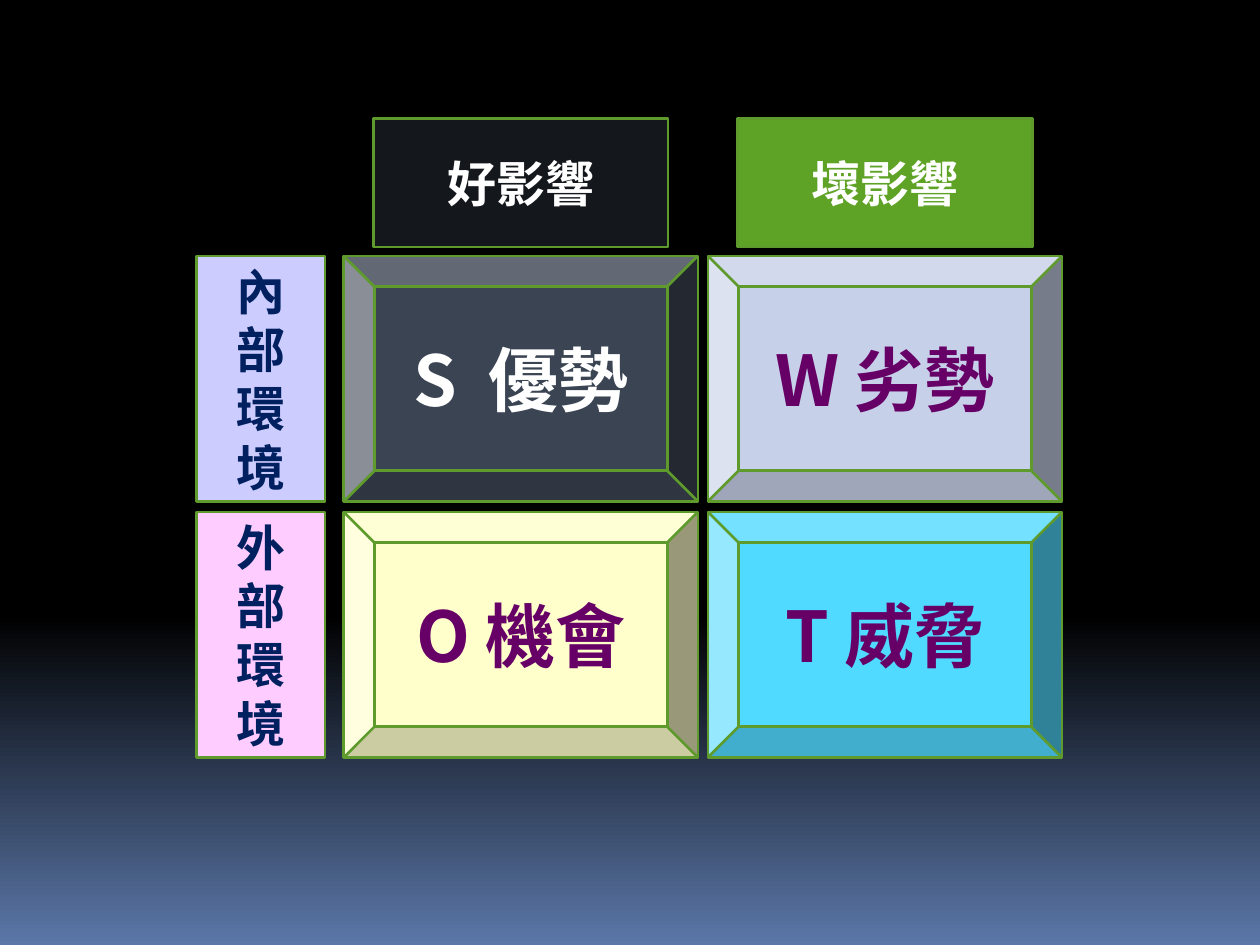
import copy

import lxml.etree
import pptx
import pptx.dml.color
import pptx.enum.shapes
import pptx.enum.text
import pptx.oxml.ns
import pptx.util

Cm = pptx.util.Cm
Shape = pptx.enum.shapes.MSO_SHAPE
CJK_FONT = "Noto Sans CJK SC"


def rgb(value):
    return pptx.dml.color.RGBColor.from_string(value)


class SwotSlide:
    """Holds the style and the current slide."""

    outline = "5E9B2C"
    label_font = {"name": "Calibri", "size": pptx.util.Pt(28), "bold": True}
    quadrant_font = {"name": CJK_FONT, "size": pptx.util.Pt(40), "bold": True}

    def __init__(self, deck):
        self.slide = deck.slides.add_slide(deck.slide_layouts[6])

    def background(self, stops):
        fill = self.slide.background.fill
        fill.gradient()
        fill.gradient_angle = 270
        first = fill.gradient_stops[0]
        first.color.rgb = rgb(stops[0][1])
        stop_list = self.slide.background._cSld.find(
            ".//" + pptx.oxml.ns.qn("a:gsLst"))
        stop_list.insert(1, copy.deepcopy(stop_list[0]))
        for stop, (position, color) in zip(fill.gradient_stops, stops):
            stop.position = position
            stop.color.rgb = rgb(color)

    def box(self, kind, left, top, width, height, fill, lines, color, font):
        box = self.slide.shapes.add_shape(
            kind, Cm(left), Cm(top), Cm(width), Cm(height))
        box.shadow.inherit = False
        box.fill.solid()
        box.fill.fore_color.rgb = rgb(fill)
        box.line.color.rgb = rgb(self.outline)
        box.line.width = pptx.util.Pt(1.5)
        frame = box.text_frame
        frame.word_wrap = True
        frame.vertical_anchor = pptx.enum.text.MSO_ANCHOR.MIDDLE
        for index, line in enumerate(lines):
            paragraph = frame.add_paragraph() if index else frame.paragraphs[0]
            paragraph.alignment = pptx.enum.text.PP_ALIGN.CENTER
            run = paragraph.add_run()
            run.text = line
            for attribute, value in font.items():
                setattr(run.font, attribute, value)
            run.font.color.rgb = rgb(color)
            # East Asian typeface
            lxml.etree.SubElement(run.font._element, pptx.oxml.ns.qn("a:ea"),
                                  typeface=CJK_FONT)

    def quadrant(self, left, top, width, height, fill, text, color):
        self.box(Shape.BEVEL, left, top, width, height, fill, [text], color,
                 self.quadrant_font)

    def label(self, left, top, width, height, fill, lines, color):
        self.box(Shape.RECTANGLE, left, top, width, height, fill, lines, color,
                 self.label_font)


def main():
    deck = pptx.Presentation()
    deck.slide_width, deck.slide_height = Cm(25.4), Cm(19.05)
    swot = SwotSlide(deck)
    swot.background([(0, "000000"), (0.65, "000000"), (1, "5B77A8")])

    # Grid
    width, height = 7.14, 4.95
    columns = [6.93 + 7.34 * i for i in range(2)]
    rows = [5.16 + 5.16 * i for i in range(2)]

    # Quadrants, column by column
    quadrants = [
        [("3B4453", "S  優勢", "FFFFFF"), ("FFFFCC", "O 機會", "660066")],
        [("C7D0E9", "W 劣勢", "660066"), ("51DAFF", "T 威脅", "660066")],
    ]
    for left, column in zip(columns, quadrants):
        for top, (fill, text, color) in zip(rows, column):
            swot.quadrant(left, top, width, height, fill, text, color)

    # Environment labels, one character per line
    environments = [("CCCCFF", "內部環境"), ("FFCCFF", "外部環境")]
    for top, (fill, text) in zip(rows, environments):
        swot.label(3.96, top, 2.59, height, fill, text, "002060")

    # Influence headings, centred over the columns
    heading_width = 5.94
    influences = [("14171C", "好影響"), ("5FA326", "壞影響")]
    for left, (fill, text) in zip(columns, influences):
        swot.label(left + (width - heading_width) / 2, 2.39, heading_width,
                   2.59, fill, [text], "FFFFFF")

    deck.save("out.pptx")


if __name__ == "__main__":
    main()
